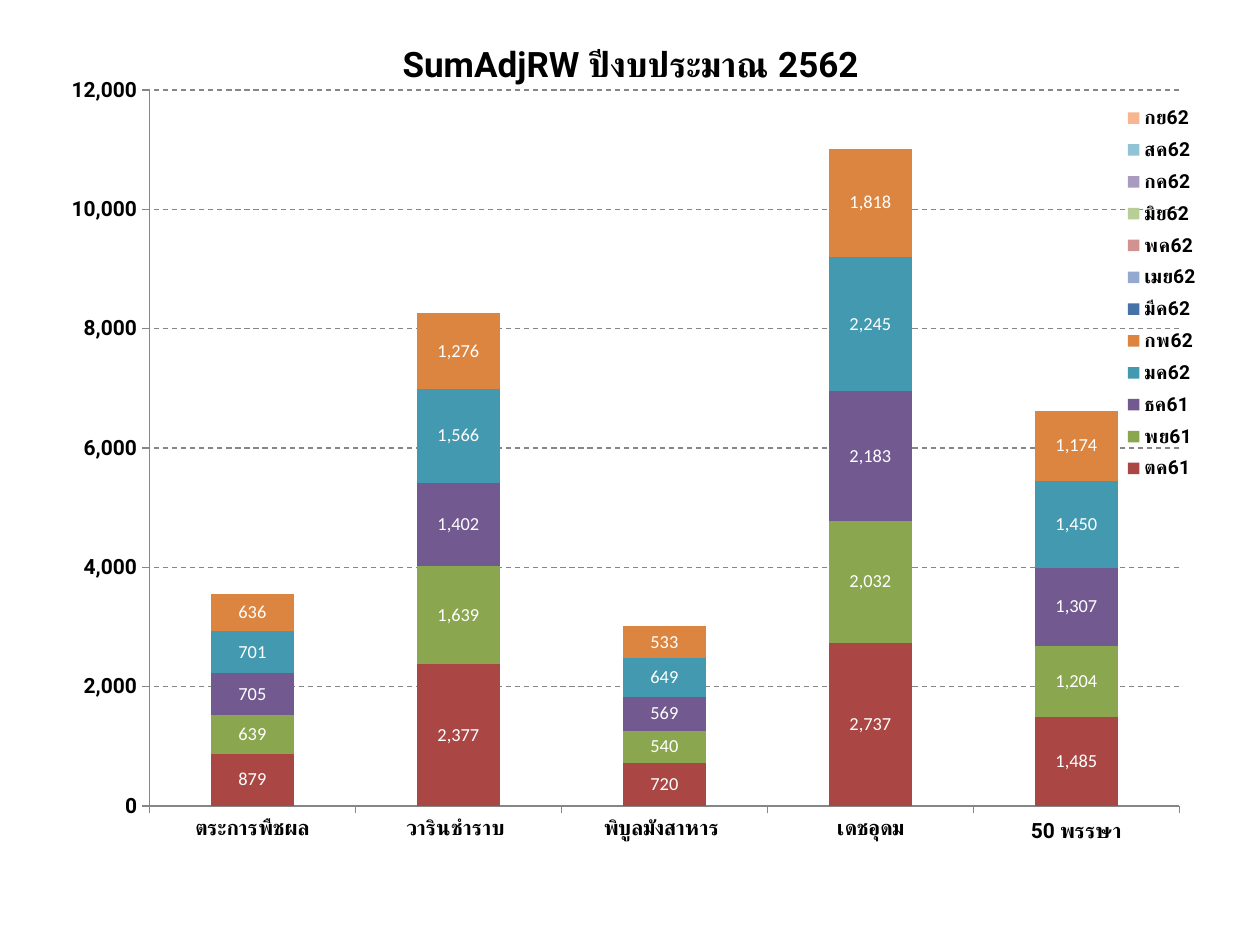
import pptx
import pptx.chart.data
import pptx.dml.color
import pptx.enum.chart
import pptx.enum.dml
import pptx.enum.text
import pptx.oxml
import pptx.util
from pptx.util import Inches

HOSPITALS = ["ตระการพืชผล", "วารินชำราบ ", "พิบูลมังสาหาร ", "เดชอุดม", "50 พรรษา"]
NO_DATA = [None] * len(HOSPITALS)
MONTHS = [
    ("ตค61", "AA4744", [879, 2377, 720, 2737, 1485]),
    ("พย61", "8AA64F", [639, 1639, 540, 2032, 1204]),
    ("ธค61", "725990", [705, 1402, 569, 2183, 1307]),
    ("มค62", "4399B0", [701, 1566, 649, 2245, 1450]),
    ("กพ62", "DC8540", [636, 1276, 533, 1818, 1174]),
    ("มีค62", "4672A8", NO_DATA),
    ("เมย62", "93A9CF", NO_DATA),
    ("พค62", "D19392", NO_DATA),
    ("มิย62", "B9CD96", NO_DATA),
    ("กค62", "A99BBD", NO_DATA),
    ("สค62", "91C3D5", NO_DATA),
    ("กย62", "F9B590", NO_DATA),
]
LABEL_FORMAT = '_-* #,##0_-;\\-* #,##0_-;_-* "-"??_-;_-@_'


def color(value):
    return pptx.dml.color.RGBColor.from_string(value)


class SlideBuilder:
    heading_font = "Roboto"
    body_font = "Calibri"
    ink = "000000"
    grid = "868686"

    def __init__(self, slide):
        self.slide = slide

    def style(self, font, size, name=None, bold=True, ink=None):
        font.name = name or self.heading_font
        font.size = pptx.util.Pt(size)
        font.bold = bold
        font.color.rgb = color(ink or self.ink)

    def title(self, text, left, top, width, height):
        box = self.slide.shapes.add_textbox(
            Inches(left), Inches(top), Inches(width), Inches(height))
        frame = box.text_frame
        frame.word_wrap = True
        frame.auto_size = pptx.enum.text.MSO_AUTO_SIZE.SHAPE_TO_FIT_TEXT
        frame.text = text
        para = frame.paragraphs[0]
        para.alignment = pptx.enum.text.PP_ALIGN.CENTER
        self.style(para.runs[0].font, 20)

    def stacked_chart(self, left, top, width, height):
        data = pptx.chart.data.CategoryChartData(number_format="#,##0")
        data.categories = HOSPITALS
        for name, _, values in MONTHS:
            data.add_series(name, values)
        chart = self.slide.shapes.add_chart(
            pptx.enum.chart.XL_CHART_TYPE.COLUMN_STACKED, Inches(left),
            Inches(top), Inches(width), Inches(height), data).chart
        chart.has_title = False
        self.style(chart.font, 18, self.body_font, bold=False)
        plot = chart.plots[0]
        plot.gap_width, plot.overlap = 150, 100
        plot.vary_by_categories = False
        for series, (_, fill, _) in zip(plot.series, MONTHS):
            series.format.fill.solid()
            series.format.fill.fore_color.rgb = color(fill)
            labels = series.data_labels
            labels.show_value = True
            labels.number_format = LABEL_FORMAT
            labels.number_format_is_linked = False
            self.style(labels.font, 10.5, self.body_font, False, "FFFFFF")
        return chart

    def axes(self, chart, maximum, step):
        for axis in (chart.category_axis, chart.value_axis):
            axis.major_tick_mark = pptx.enum.chart.XL_TICK_MARK.OUTSIDE
            axis.format.line.color.rgb = color(self.grid)
            axis.format.line.width = pptx.util.Pt(0.75)
            self.style(axis.tick_labels.font, 12)
        values = chart.value_axis
        values.minimum_scale, values.maximum_scale = 0, maximum
        values.major_unit = step
        values.tick_labels.number_format = "#,##0"
        values.tick_labels.number_format_is_linked = False
        values.has_major_gridlines = True
        line = values.major_gridlines.format.line
        line.color.rgb = color(self.grid)
        line.width = pptx.util.Pt(0.75)
        line.dash_style = pptx.enum.dml.MSO_LINE.DASH

    def legend(self, chart):
        chart.has_legend = True
        legend = chart.legend
        legend.position = pptx.enum.chart.XL_LEGEND_POSITION.RIGHT
        legend.include_in_layout = True
        self.style(legend.font, 11)
        return legend

    def place(self, parent, before, x, y, w, h, inner=False):
        """Give a plot area or legend a fixed place, in parts of the chart."""
        for old in parent.findall(pptx.oxml.ns.qn("c:layout")):
            parent.remove(old)
        settings = [("layoutTarget", "inner")] if inner else []
        settings += [("xMode", "edge"), ("yMode", "edge"),
                     ("x", x), ("y", y), ("w", w), ("h", h)]
        parts = "".join(f'<c:{tag} val="{value}"/>' for tag, value in settings)
        layout = pptx.oxml.parse_xml(
            f'<c:layout {pptx.oxml.ns.nsdecls("c")}>'
            f"<c:manualLayout>{parts}</c:manualLayout></c:layout>")
        parent.find(pptx.oxml.ns.qn(before)).addprevious(layout)


def main():
    deck = pptx.Presentation()
    deck.slide_width, deck.slide_height = Inches(10), Inches(7.5)
    builder = SlideBuilder(deck.slides.add_slide(deck.slide_layouts[6]))

    # Monthly totals stacked by hospital
    chart = builder.stacked_chart(0.35, 0.52, 9.29, 6.46)
    builder.axes(chart, maximum=12000, step=2000)
    plot_area = chart.plots[0]._element.getparent()
    builder.place(plot_area, "c:barChart", 0.09, 0.03, 0.88, 0.88, inner=True)

    # Legend over the right edge of the plot
    legend = builder.legend(chart)
    builder.place(legend._element, "c:overlay", 0.92, 0.04, 0.07, 0.48)

    # Title
    builder.title("SumAdjRW ปีงบประมาณ 2562", 0.83, 0.29, 8.35, 0.44)

    deck.save("out.pptx")


if __name__ == "__main__":
    main()
